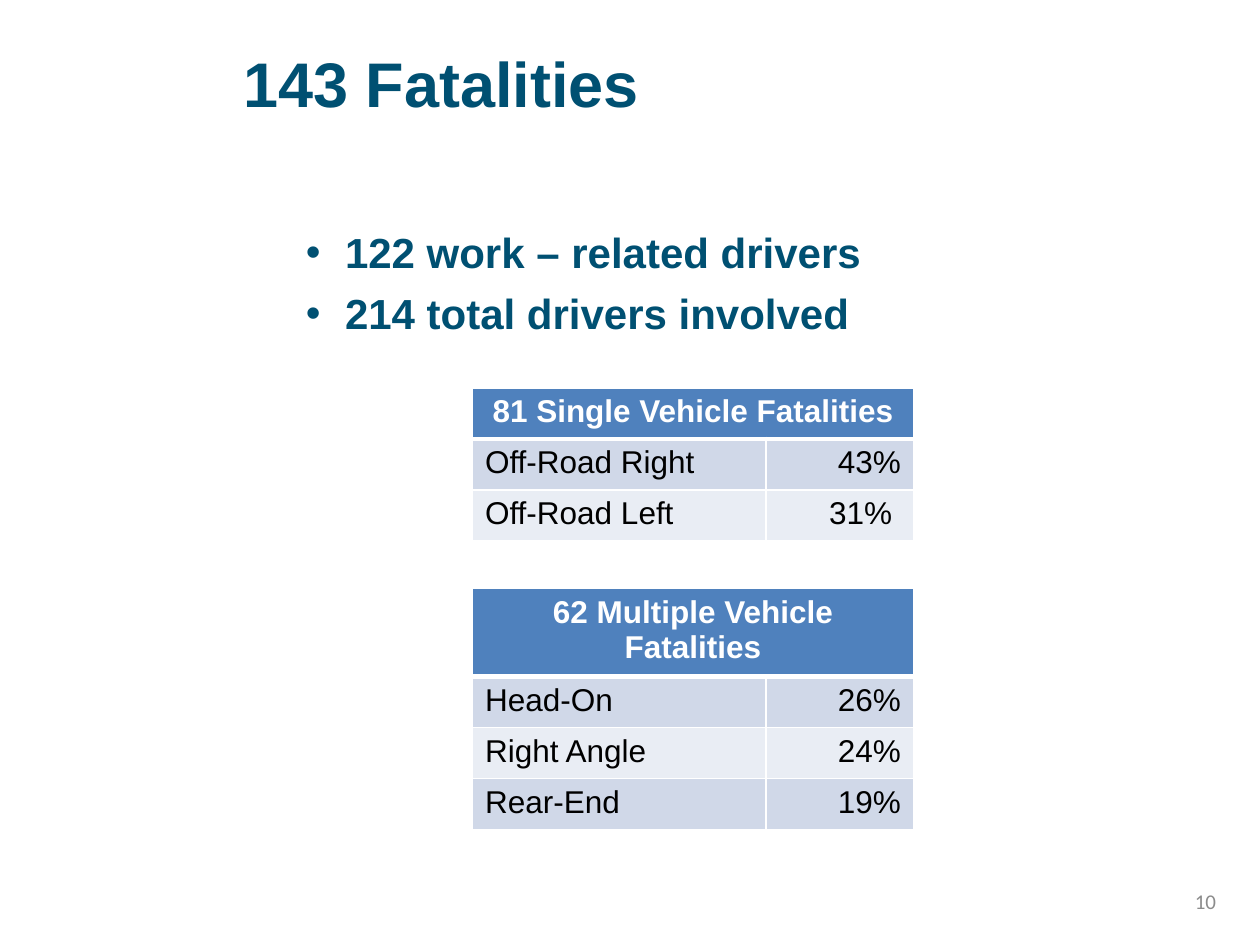
import pptx
import pptx.util
import pptx.dml.color
import pptx.enum.text
import pptx.oxml
import pptx.oxml.ns
import lxml.etree

Inches = pptx.util.Inches
Pt = pptx.util.Pt
ALIGN = pptx.enum.text.PP_ALIGN
ANCHOR = pptx.enum.text.MSO_ANCHOR
qn = pptx.oxml.ns.qn

HUES = {"teal": "005072", "head": "4F81BD", "odd": "D0D8E8", "even": "E9EDF4",
        "white": "FFFFFF", "black": "000000", "gray": "8C8C8C"}


def add_run(para, text, size, hue, bold=False, face="Arial"):
    run = para.add_run()
    run.text = text
    run.font.size = Pt(size)
    run.font.name = face
    run.font.bold = bold
    run.font.color.rgb = pptx.dml.color.RGBColor.from_string(HUES[hue])


def add_edge(cell, tag, width):
    line = lxml.etree.SubElement(cell._tc.get_or_add_tcPr(), qn(tag), w=str(Pt(width)))
    fill = lxml.etree.SubElement(line, qn("a:solidFill"))
    lxml.etree.SubElement(fill, qn("a:srgbClr"), val=HUES["white"])


deck = pptx.Presentation()
deck.slide_width, deck.slide_height = Inches(10), Inches(7.5)
slide = deck.slides.add_slide(deck.slide_layouts[5])

# Title
title = slide.shapes.title
title.left, title.top = Inches(1.83), Inches(0.3)
title.width, title.height = Inches(7.92), Inches(1.25)
title.text_frame.vertical_anchor = ANCHOR.TOP
para = title.text_frame.paragraphs[0]
para.alignment = ALIGN.LEFT
add_run(para, "143 Fatalities", 36, "teal", True)

# Bullets
body = slide.shapes.add_textbox(Inches(1.83), Inches(1.75), Inches(7.92), Inches(4.95))
frame = body.text_frame
frame.word_wrap = True
for i, text in enumerate(["122 work – related drivers", "214 total drivers involved"]):
    para = frame.add_paragraph() if i else frame.paragraphs[0]
    props = para._p.get_or_add_pPr()
    props.set("marL", str(Inches(0.81)))
    props.set("indent", str(Inches(-0.31)))
    lxml.etree.SubElement(props, qn("a:buFont"), typeface="Arial")
    lxml.etree.SubElement(props, qn("a:buChar"), char="•")
    if i:
        para.space_before = Pt(6)
    add_run(para, text, 24, "teal", True)

# Tables: top, heading, rows
tables = [
    (3.08, "81 Single Vehicle Fatalities",
     [("Off-Road Right", "43%"), ("Off-Road Left", "31% ")]),
    (4.67, "62 Multiple Vehicle Fatalities",
     [("Head-On", "26%"), ("Right Angle", "24%"), ("Rear-End", "19%")]),
]
row_h = 0.405
for top, head, data in tables:
    rows = [(head, "")] + data
    table = slide.shapes.add_table(len(rows), 2, Inches(3.75), Inches(top),
                                   Inches(3.5), Inches(row_h * len(rows))).table
    table.columns[0].width, table.columns[1].width = Inches(2.33), Inches(1.17)
    table.cell(0, 0).merge(table.cell(0, 1))
    for r, row in enumerate(rows):
        table.rows[r].height = Inches(row_h)
        for c, text in enumerate(row):
            cell = table.cell(r, c)
            add_edge(cell, "a:lnL", 1)
            add_edge(cell, "a:lnR", 1)
            add_edge(cell, "a:lnT", 3 if r == 1 else 1)
            add_edge(cell, "a:lnB", 3 if r == 0 else 1)
            hue = "head" if r == 0 else "odd" if r % 2 else "even"
            cell.fill.solid()
            cell.fill.fore_color.rgb = pptx.dml.color.RGBColor.from_string(HUES[hue])
            if text:
                para = cell.text_frame.paragraphs[0]
                para.alignment = (ALIGN.CENTER if r == 0
                                  else ALIGN.RIGHT if c else ALIGN.LEFT)
                add_run(para, text, 18, "black" if r else "white", r == 0)

# Page number
page = slide.shapes.add_textbox(Inches(8.58), Inches(6.95), Inches(1.17), Inches(0.4))
page.text_frame.word_wrap = True
page.text_frame.vertical_anchor = ANCHOR.MIDDLE
para = page.text_frame.paragraphs[0]
para.alignment = ALIGN.RIGHT
add_run(para, "10", 12, "gray", face="Calibri")

deck.save("out.pptx")
